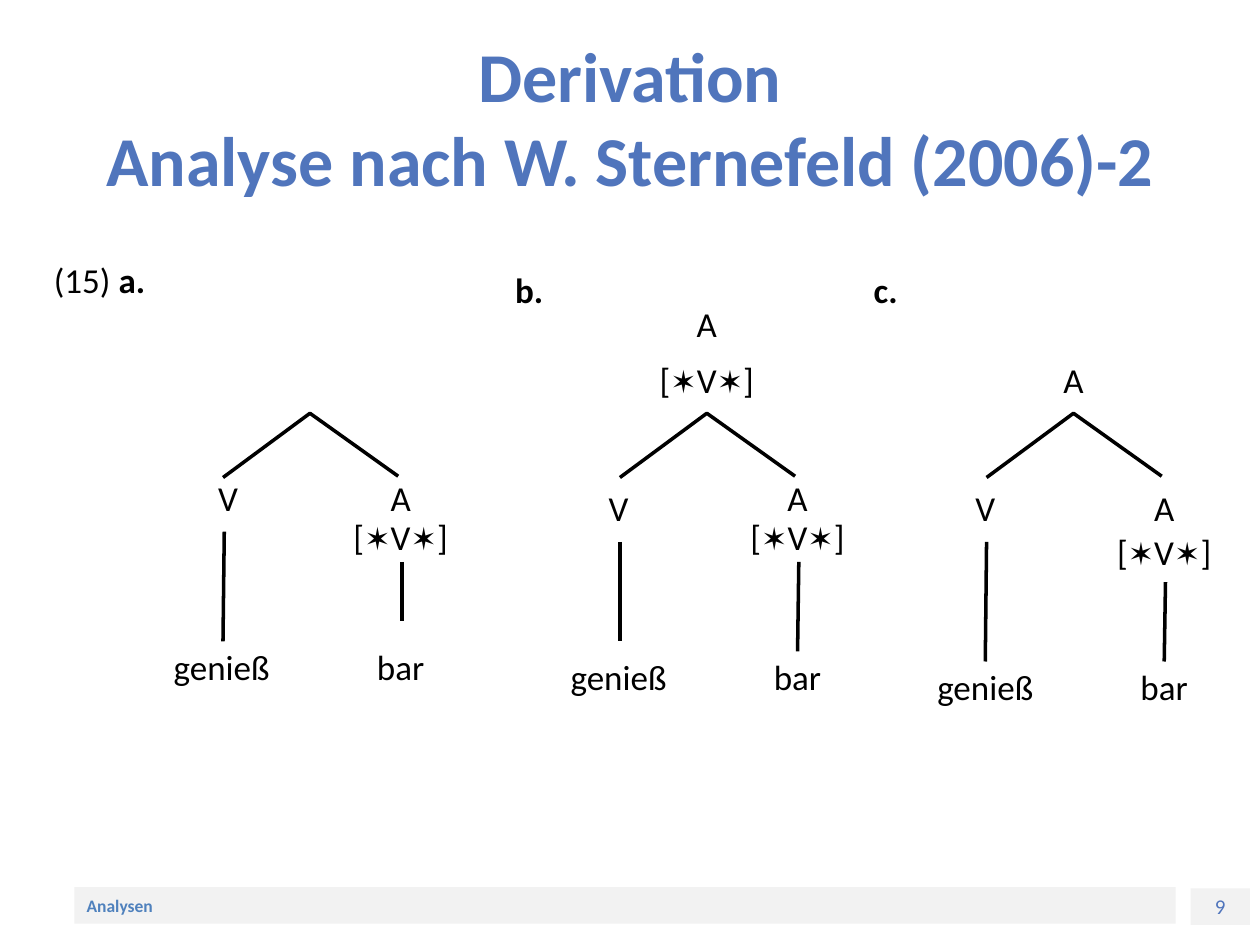
import pptx
import pptx.util
import pptx.dml.color
import pptx.enum.shapes
import pptx.enum.text
import pptx.oxml.ns
import lxml.etree

Inches = pptx.util.Inches
Pt = pptx.util.Pt
CENTER = pptx.enum.text.PP_ALIGN.CENTER
LEFT = pptx.enum.text.PP_ALIGN.LEFT
MIDDLE = pptx.enum.text.MSO_ANCHOR.MIDDLE

BLACK = pptx.dml.color.RGBColor(0x00, 0x00, 0x00)
TITLE_BLUE = pptx.dml.color.RGBColor(0x50, 0x75, 0xBC)
FOOTER_BLUE = pptx.dml.color.RGBColor(0x4F, 0x81, 0xBD)
FOOTER_GRAY = pptx.dml.color.RGBColor(0xF2, 0xF2, 0xF2)

TITLE_LINES = ["Derivation", "Analyse nach W. Sternefeld (2006)-2"]

FOOTERS = [
    ("9", (9.45, 7.05, 0.47, 0.29), 12, False, TITLE_BLUE, CENTER),
    ("Analysen", (0.59, 7.04, 8.74, 0.29), 10, True, FOOTER_BLUE, LEFT),
]

FEATURE = [("[", 20, False), ("✶", 18, False), ("V", 20, False),
           ("✶", 18, False), ("]", 20, False)]

LABELS = [
    ([("(15) ", 20, False), ("a. ", 20, True)], 0.79, 2.22),
    ([("b.", 20, True)], 4.2, 2.3),
    ([("c.", 20, True)], 7.03, 2.3),
]

TREES = [
    {"apex": 2.46, "root": [],
     "verb": (-0.65, 3.95), "affix_y": 3.95, "feature_y": 4.26, "word_y": 5.29,
     "stems": [(-0.68, 4.22, -0.69, 5.09), (0.73, 4.46, 0.73, 4.93)]},
    {"apex": 5.61, "root": [("A", 2.57), (FEATURE, 3.01)],
     "verb": (-0.7, 4.03), "affix_y": 3.95, "feature_y": 4.26, "word_y": 5.37,
     "stems": [(-0.69, 4.3, -0.69, 5.09), (0.73, 4.46, 0.72, 5.17)]},
    {"apex": 8.52, "root": [("A", 3.01)],
     "verb": (-0.7, 4.03), "affix_y": 4.03, "feature_y": 4.38, "word_y": 5.45,
     "stems": [(-0.69, 4.3, -0.7, 5.25), (0.73, 4.62, 0.72, 5.25)]},
]
APEX_Y = 3.28
BRANCH_ENDS = [(-0.69, 3.79), (0.7, 3.78)]
VERB_X, AFFIX_X = -0.7, 0.72
NODE_W, NODE_H = 0.76, 0.39
STEM_WORD_W = 0.9


def add_run(paragraph, text, size, bold, color):
    run = paragraph.add_run()
    run.text = text
    run.font.name = "Calibri"
    run.font.size = Pt(size)
    run.font.bold = bold
    run.font.color.rgb = color


def add_node(slide, content, x, y, width=NODE_W):
    runs = [(content, 20, False)] if isinstance(content, str) else content
    node = slide.shapes.add_textbox(
        Inches(x - width / 2), Inches(y - NODE_H / 2), Inches(width), Inches(NODE_H))
    frame = node.text_frame
    frame.word_wrap = False
    frame.vertical_anchor = MIDDLE
    frame.margin_left = frame.margin_right = frame.margin_top = frame.margin_bottom = 0
    frame.paragraphs[0].alignment = CENTER
    for text, size, bold in runs:
        add_run(frame.paragraphs[0], text, size, bold, BLACK)


def draw_black(line):
    line.color.rgb = BLACK
    line.width = Pt(2)


def add_stem(slide, x1, y1, x2, y2):
    stem = slide.shapes.add_connector(
        pptx.enum.shapes.MSO_CONNECTOR.STRAIGHT,
        Inches(x1), Inches(y1), Inches(x2), Inches(y2))
    draw_black(stem.line)
    lxml.etree.SubElement(stem._element.spPr, pptx.oxml.ns.qn("a:effectLst"))


def add_branches(slide, apex):
    left, right = [(Inches(apex + dx), Inches(y)) for dx, y in BRANCH_ENDS]
    builder = slide.shapes.build_freeform(*left)
    builder.add_line_segments([(Inches(apex), Inches(APEX_Y)), right], close=False)
    branches = builder.convert_to_shape()
    branches.shadow.inherit = False
    branches.fill.background()
    draw_black(branches.line)


def add_tree(slide, tree):
    apex = tree["apex"]
    verb_dx, verb_y = tree["verb"]
    for content, y in tree["root"]:
        add_node(slide, content, apex, y)
    add_node(slide, "V", apex + verb_dx, verb_y)
    add_node(slide, "A", apex + AFFIX_X, tree["affix_y"])
    add_node(slide, FEATURE, apex + AFFIX_X, tree["feature_y"])
    add_node(slide, "genieß", apex + VERB_X, tree["word_y"], STEM_WORD_W)
    add_node(slide, "bar", apex + AFFIX_X, tree["word_y"])
    for x1, y1, x2, y2 in tree["stems"]:
        add_stem(slide, apex + x1, y1, apex + x2, y2)
    add_branches(slide, apex)


def add_footer(slide, text, box, size, bold, color, alignment):
    footer = slide.shapes.add_shape(
        pptx.enum.shapes.MSO_SHAPE.RECTANGLE, *map(Inches, box))
    footer.shadow.inherit = False
    footer.fill.solid()
    footer.fill.fore_color.rgb = FOOTER_GRAY
    footer.line.fill.background()
    frame = footer.text_frame
    frame.vertical_anchor = MIDDLE
    frame.margin_top = frame.margin_bottom = 0
    frame.paragraphs[0].alignment = alignment
    add_run(frame.paragraphs[0], text, size, bold, color)


def add_title(slide):
    title = slide.shapes.title
    title.left, title.top, title.width, title.height = map(Inches, (0.5, 0.3, 9, 1.25))
    frame = title.text_frame
    frame.auto_size = pptx.enum.text.MSO_AUTO_SIZE.NONE
    frame.vertical_anchor = MIDDLE
    heading = frame.paragraphs[0]
    heading.alignment = CENTER
    for index, text in enumerate(TITLE_LINES):
        if index:
            heading.add_line_break()
        add_run(heading, text, 40, True, TITLE_BLUE)


def main():
    deck = pptx.Presentation()
    deck.slide_width, deck.slide_height = Inches(10), Inches(7.5)
    slide = deck.slides.add_slide(deck.slide_layouts.get_by_name("Title Only"))
    add_title(slide)
    for footer in FOOTERS:
        add_footer(slide, *footer)
    for label in LABELS:
        add_node(slide, *label)
    for tree in TREES:
        add_tree(slide, tree)
    deck.save("out.pptx")


if __name__ == "__main__":
    main()
